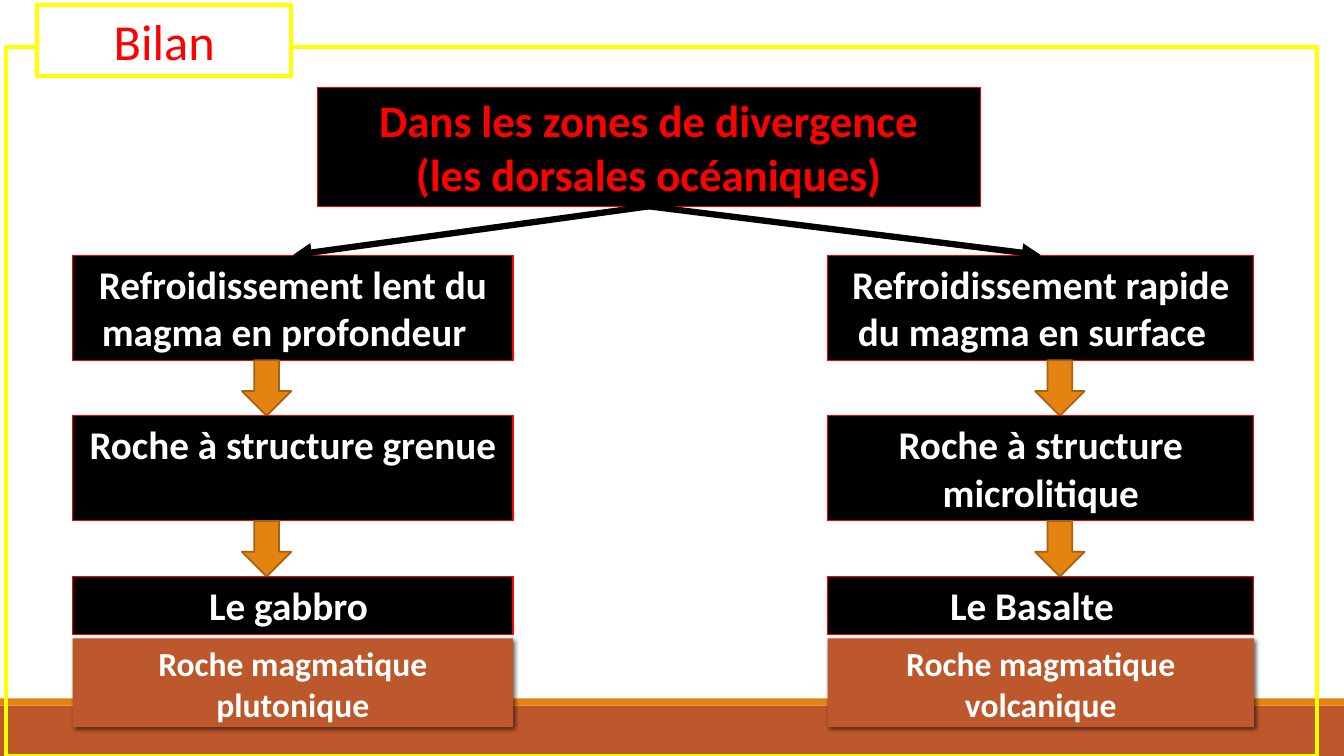
from lxml import etree
from pptx import Presentation
from pptx.dml.color import RGBColor
from pptx.enum import shapes as kinds, text as txt
from pptx.oxml import ns
from pptx.util import Pt

BLACK = RGBColor(0x00, 0x00, 0x00)
WHITE = RGBColor(0xFF, 0xFF, 0xFF)
RED = RGBColor(0xFF, 0x00, 0x00)
YELLOW = RGBColor(0xFF, 0xFF, 0x00)
ORANGE = RGBColor(0xE4, 0x83, 0x12)
DARK_ORANGE = RGBColor(0xA9, 0x61, 0x0D)
RUST = RGBColor(0xBD, 0x58, 0x2C)

RECT = kinds.MSO_SHAPE.RECTANGLE
DOWN_ARROW = kinds.MSO_SHAPE.DOWN_ARROW

FRAME_FORMAT = {"word_wrap": True, "auto_size": txt.MSO_AUTO_SIZE.NONE,
                "vertical_anchor": txt.MSO_ANCHOR.TOP,
                "margin_left": Pt(7.2), "margin_right": Pt(7.2),
                "margin_top": Pt(3.6), "margin_bottom": Pt(3.6)}

STEP_TOP, STEP_PITCH, STEP_HEIGHT = 182.2, 114.8, 75.1
NAME_HEIGHT = 41.3
ARROW_WIDTH = 35.3
BRANCHES = [
    {"left": 51.9, "width": 314.6, "arrow_left": 172.8,
     "steps": ["Refroidissement lent du magma en profondeur  ",
               "Roche à structure grenue", "Le gabbro "],
     "family": "Roche magmatique plutonique"},
    {"left": 591.2, "width": 304.5, "arrow_left": 739.4,
     "steps": ["Refroidissement rapide du magma en surface  ",
               "Roche à structure microlitique", "Le Basalte  "],
     "family": "Roche magmatique volcanique"},
]


def apply(target, values):
    for name, value in values.items():
        setattr(target, name, value)


def paint(shape, fill=None, line=None, line_width=0.75):
    if fill is None:
        shape.fill.background()
    else:
        shape.fill.solid()
        shape.fill.fore_color.rgb = fill
    if line is None:
        shape.line.fill.background()
    else:
        shape.line.color.rgb = line
        shape.line.width = Pt(line_width)


def add_block(slide, kind, box, **colours):
    block = slide.shapes.add_shape(kind, *map(Pt, box))
    block.shadow.inherit = False
    paint(block, **colours)
    return block


def write(shape, lines, size, colour=WHITE, bold=True):
    frame = shape.text_frame
    apply(frame, FRAME_FORMAT)
    frame.text = "\n".join(lines)
    for paragraph in frame.paragraphs:
        paragraph.alignment = txt.PP_ALIGN.CENTER
        font = paragraph.runs[0].font
        apply(font, {"name": "Calibri", "size": Pt(size), "bold": bold})
        font.color.rgb = colour


def cast_shadow(shape):
    effects = shape._element.spPr.find(ns.qn("a:effectLst"))
    shadow = etree.SubElement(effects, ns.qn("a:outerShdw"), blurRad=str(Pt(3.5)),
                              dist=str(Pt(2)), dir="2700000", rotWithShape="0")
    tint = etree.SubElement(shadow, ns.qn("a:srgbClr"), val=str(BLACK))
    etree.SubElement(tint, ns.qn("a:alpha"), val="60000")


def link(slide, source, target):
    link_line = slide.shapes.add_connector(kinds.MSO_CONNECTOR.STRAIGHT, 0, 0, 0, 0)
    link_line.begin_connect(source, 2)
    link_line.end_connect(target, 0)
    link_line.line.color.rgb = BLACK
    link_line.line.width = Pt(4.5)
    etree.SubElement(link_line.line._get_or_add_ln(), ns.qn("a:tailEnd"), type="triangle")
    etree.SubElement(link_line._element.spPr, ns.qn("a:effectLst"))


def add_branch(slide, zone, left, width, arrow_left, steps, family):
    for row, wording in enumerate(steps):
        top = STEP_TOP + row * STEP_PITCH
        last = row == len(steps) - 1
        height = NAME_HEIGHT if last else STEP_HEIGHT
        step = add_block(slide, RECT, (left, top, width, height), fill=BLACK, line=RED)
        write(step, [wording], 28)
        if row == 0:
            link(slide, zone, step)
        if not last:
            add_block(slide, DOWN_ARROW,
                      (arrow_left, top + height, ARROW_WIDTH, STEP_PITCH - height),
                      fill=ORANGE, line=DARK_ORANGE, line_width=1.25)
    rock_family = add_block(slide, RECT, (left, 456, width, 63.4), fill=RUST)
    cast_shadow(rock_family)
    write(rock_family, [family], 24)


def place_title(slide, wording):
    title = slide.shapes.title
    apply(title, dict(zip(("left", "top", "width", "height"),
                          map(Pt, (26.6, 3.6, 181.5, 51)))))
    paint(title, fill=WHITE, line=YELLOW, line_width=3)
    write(title, [wording], 36, RED, bold=False)
    slide.shapes._spTree.append(title._element)


def main():
    deck = Presentation()
    deck.slide_width, deck.slide_height = Pt(960), Pt(540)
    slide = deck.slides.add_slide(deck.slide_layouts[5])

    add_block(slide, RECT, (0, 504, 960, 36), fill=RUST)
    add_block(slide, RECT, (0, 498.8, 960, 5.2), fill=ORANGE)

    zone = add_block(slide, RECT, (226.9, 62.6, 473.2, 84.8), fill=BLACK, line=RED)
    write(zone, ["Dans les zones de divergence", " (les dorsales océaniques) "], 32, RED)
    for branch in BRANCHES:
        add_branch(slide, zone, **branch)

    add_block(slide, RECT, (4.3, 33.8, 936.4, 506.2), line=YELLOW, line_width=3)
    place_title(slide, "Bilan")
    deck.save("out.pptx")


if __name__ == "__main__":
    main()
